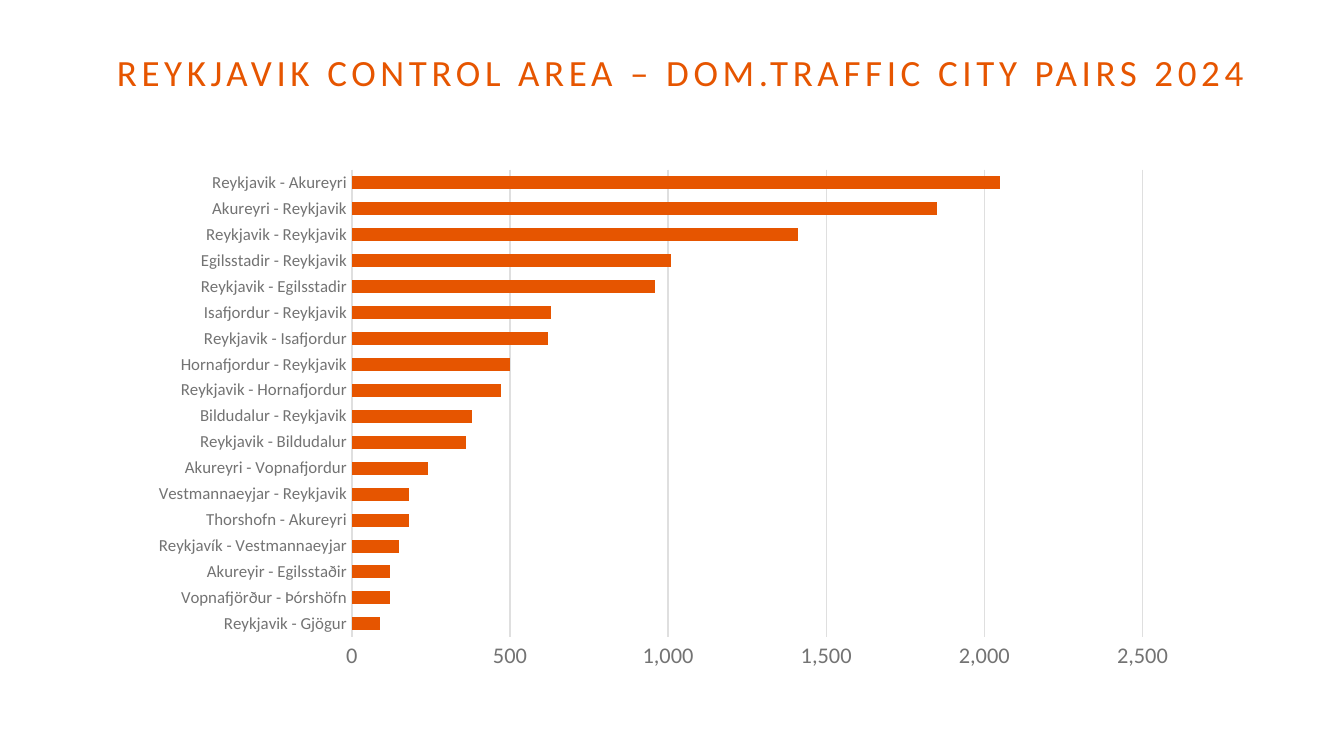
"""Build a slide with a bar chart of domestic traffic by city pair."""
from lxml import etree
from pptx import Presentation
from pptx.chart.data import CategoryChartData
from pptx.dml.color import RGBColor
from pptx.enum.chart import XL_CHART_TYPE, XL_TICK_MARK
from pptx.enum.text import MSO_ANCHOR, MSO_AUTO_SIZE, PP_ALIGN
from pptx.oxml.ns import qn
from pptx.util import Pt

BAR_CLUSTERED = XL_CHART_TYPE.BAR_CLUSTERED
NO_TICK = XL_TICK_MARK.NONE
MIDDLE = MSO_ANCHOR.MIDDLE
NO_AUTOFIT = MSO_AUTO_SIZE.NONE
LEFT = PP_ALIGN.LEFT

ORANGE = RGBColor(0xE6, 0x55, 0x00)
DARK = RGBColor(0x27, 0x27, 0x27)
GREY = RGBColor(0x73, 0x73, 0x73)
PALE = RGBColor(0xDF, 0xDF, 0xDF)
FONT = "Calibri"

FLIGHTS = [
    ("Reykjavik - Gjögur", 90),
    ("Vopnafjörður - Þórshöfn", 120),
    ("Akureyir - Egilsstaðir", 120),
    ("Reykjavík - Vestmannaeyjar", 150),
    ("Thorshofn - Akureyri", 180),
    ("Vestmannaeyjar - Reykjavik", 180),
    ("Akureyri - Vopnafjordur", 240),
    ("Reykjavik - Bildudalur", 360),
    ("Bildudalur - Reykjavik", 380),
    ("Reykjavik - Hornafjordur", 470),
    ("Hornafjordur - Reykjavik", 500),
    ("Reykjavik - Isafjordur", 620),
    ("Isafjordur - Reykjavik", 630),
    ("Reykjavik - Egilsstadir", 960),
    ("Egilsstadir - Reykjavik", 1010),
    ("Reykjavik - Reykjavik", 1410),
    ("Akureyri - Reykjavik", 1850),
    ("Reykjavik - Akureyri", 2050),
]


def set_font(font, size, color):
    font.name = FONT
    font.size = Pt(size)
    font.bold = False
    font.color.rgb = color


deck = Presentation()
deck.slide_width, deck.slide_height = Pt(720), Pt(405)
page = deck.slides.add_slide(deck.slide_layouts[5])

title = page.shapes.title
title.left, title.top, title.width, title.height = Pt(62.6), Pt(13), Pt(620.6), Pt(48.2)
frame = title.text_frame
frame.text = "REYKJAVIK CONTROL AREA – DOM.TRAFFIC CITY PAIRS 2024"
frame.word_wrap = True
frame.auto_size = NO_AUTOFIT
frame.vertical_anchor = MIDDLE
frame.margin_left = frame.margin_top = frame.margin_right = frame.margin_bottom = 0
para = frame.paragraphs[0]
para.alignment = LEFT
para.line_spacing = Pt(26)
set_font(para.font, 19.8, ORANGE)
para.runs[0].font._element.set("spc", "250")

data = CategoryChartData(number_format="#,##0")
data.categories = [pair for pair, count in FLIGHTS]
data.add_series("Series 1", [count for pair, count in FLIGHTS])
chart = page.shapes.add_chart(
    BAR_CLUSTERED, Pt(62.6), Pt(85), Pt(572.4), Pt(298), data
).chart
chart.has_legend = False
chart.has_title = False
set_font(chart.font, 10, DARK)

plot = chart.plots[0]
plot.gap_width = 100
plot.overlap = -12
plot.vary_by_categories = False
bars = plot.series[0]
bars.format.fill.solid()
bars.format.fill.fore_color.rgb = ORANGE

pairs_axis = chart.category_axis
counts_axis = chart.value_axis
for axis, size in ((pairs_axis, 9), (counts_axis, 12)):
    axis.major_tick_mark = axis.minor_tick_mark = NO_TICK
    set_font(axis.tick_labels.font, size, GREY)
counts_axis.minimum_scale = 0
counts_axis.maximum_scale = 2500
counts_axis.major_unit = 500
counts_axis.tick_labels.number_format = "#,##0"
counts_axis.tick_labels.number_format_is_linked = False
counts_axis.format.line.fill.background()
counts_axis.has_major_gridlines = True
for line in (pairs_axis.format.line, counts_axis.major_gridlines.format.line):
    line.color.rgb = PALE
    line.width = Pt(0.75)

plot_area = chart._chartSpace.chart.plotArea
for old_layout in plot_area.findall(qn("c:layout")):
    plot_area.remove(old_layout)
layout = etree.Element(qn("c:layout"))
manual = etree.SubElement(layout, qn("c:manualLayout"))
for tag, value in (
    ("layoutTarget", "inner"), ("xMode", "edge"), ("yMode", "edge"),
    ("x", "0.22"), ("y", "0.02"), ("w", "0.74"), ("h", "0.84"),
):
    etree.SubElement(manual, qn(f"c:{tag}")).set("val", value)
plot_area.insert(0, layout)

deck.save("out.pptx")
